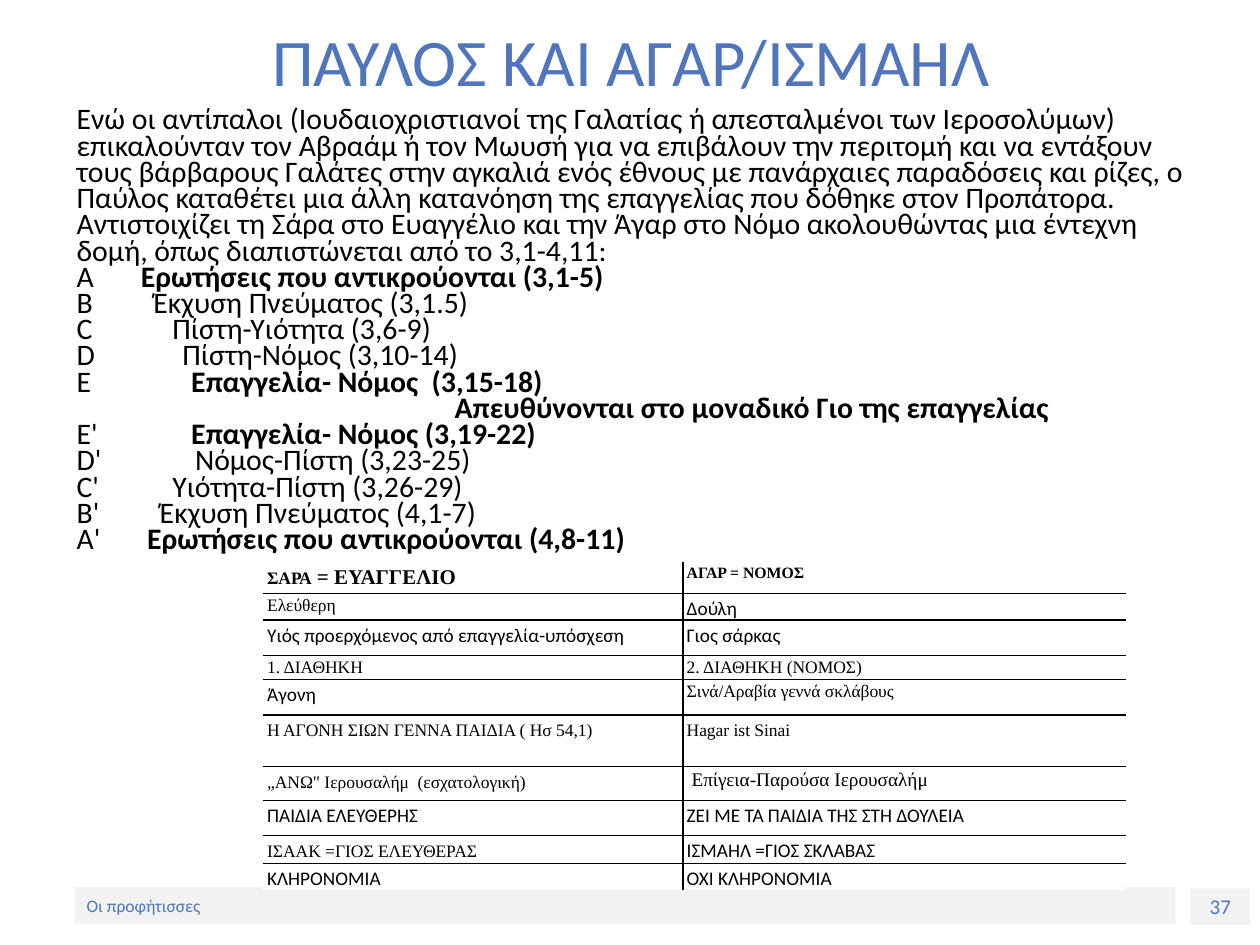
from dataclasses import dataclass

from lxml import etree
from pptx import Presentation, util as u
from pptx.dml.color import RGBColor
from pptx.enum import shapes, text
from pptx.oxml.ns import qn


@dataclass(frozen=True)
class Theme:
    sans: str = "Calibri"
    serif: str = "Times New Roman"
    blue: str = "5075BC"
    black: str = "000000"
    white: str = "FFFFFF"
    grey: str = "F2F2F2"
    title: float = 38
    body: float = 17
    lead: float = 15
    page: float = 12
    foot: float = 10
    cell: float = 11
    small: float = 10
    tiny: float = 9
    large: float = 12


T = Theme()
LEFT, MID = text.PP_ALIGN.LEFT, text.PP_ALIGN.CENTER


class Deck:
    def __init__(self, theme):
        self.theme = theme
        self.prs = Presentation()
        self.prs.slide_width, self.prs.slide_height = u.Inches(10), u.Inches(7.5)
        self.slide = self.prs.slides.add_slide(self.prs.slide_layouts[6])

    def style(self, para, size, color, face=None):
        font = para.font
        font.size, font.name = u.Pt(size), face or self.theme.sans
        font.color.rgb = RGBColor.from_string(color)

    def box(self, place):
        frame = self.slide.shapes.add_textbox(*map(u.Inches, place)).text_frame
        frame.word_wrap = True
        return frame

    def title(self, words, place):
        frame = self.box(place)
        frame.vertical_anchor = text.MSO_ANCHOR.MIDDLE
        para = frame.paragraphs[0]
        para.text, para.alignment = words, MID
        self.style(para, self.theme.title, self.theme.blue)

    def bar(self, words, place, size, align):
        shape = self.slide.shapes.add_shape(
            shapes.MSO_SHAPE.RECTANGLE, *map(u.Inches, place))
        shape.shadow.inherit = False
        shape.fill.solid()
        shape.fill.fore_color.rgb = RGBColor.from_string(self.theme.grey)
        shape.line.fill.background()
        frame = shape.text_frame
        frame.vertical_anchor = text.MSO_ANCHOR.MIDDLE
        para = frame.paragraphs[0]
        para.text, para.alignment = words, align
        self.style(para, size, self.theme.blue)

    def body(self, intro, steps, place):
        """Write the intro, then one tabbed line per (mark, stop, words, bold)."""
        frame = self.box(place)
        para = frame.paragraphs[0]
        para.text = intro
        self.line(para)
        for mark, stop, words, bold in steps:
            para = frame.add_paragraph()
            para.add_run().text = mark + "\t"
            run = para.add_run()
            run.text, run.font.bold = words, bold
            self.line(para, stop)

    def line(self, para, stop=None):
        para.line_spacing = u.Pt(self.theme.lead)
        if stop:
            tabs = etree.SubElement(para._p.get_or_add_pPr(), qn("a:tabLst"))
            etree.SubElement(tabs, qn("a:tab"), pos=str(u.Inches(stop)), algn="l")
        self.style(para, self.theme.body, self.theme.black)

    def edges(self, cell, drawn):
        """Draw the named sides in black and clear the others."""
        props = cell._tc.get_or_add_tcPr()
        for side in "LRTB":
            edge = etree.SubElement(props, qn("a:ln" + side), w=str(u.Pt(1)))
            if side in drawn:
                fill = etree.SubElement(edge, qn("a:solidFill"))
                etree.SubElement(fill, qn("a:srgbClr"), val=self.theme.black)
            else:
                etree.SubElement(edge, qn("a:noFill"))

    def table(self, rows, place, widths):
        grid = self.slide.shapes.add_table(
            len(rows), len(widths), *map(u.Inches, place)).table
        grid.first_row = grid.horz_banding = False
        for col, width in zip(grid.columns, widths):
            col.width = u.Inches(width)
        for r, (high, *cells) in enumerate(rows):
            grid.rows[r].height = u.Inches(high)
            for c, (words, face, size, *drop) in enumerate(cells):
                cell = grid.cell(r, c)
                sides = "L" if c else "R"
                sides += "T" if r else ""
                sides += "B" if r < len(rows) - 1 else ""
                self.edges(cell, sides)
                cell.fill.solid()
                cell.fill.fore_color.rgb = RGBColor.from_string(self.theme.white)
                cell.margin_left = cell.margin_right = u.Inches(0.03)
                cell.margin_top = u.Inches(drop[0] if drop else 0)
                cell.margin_bottom = 0
                para = cell.text_frame.paragraphs[0]
                para.text, para.line_spacing = words, 1.15
                self.style(para, size, self.theme.black, face)
                para.font.bold = r == 0
        return grid


INTRO = (
    "Ενώ οι αντίπαλοι (Ιουδαιοχριστιανοί της Γαλατίας ή απεσταλμένοι των "
    "Ιεροσολύμων) επικαλούνταν τον Αβραάμ ή τον Μωυσή για να επιβάλουν την "
    "περιτομή και να εντάξουν τους βάρβαρους Γαλάτες στην αγκαλιά ενός έθνους "
    "με πανάρχαιες παραδόσεις και ρίζες, ο Παύλος καταθέτει μια άλλη κατανόηση "
    "της επαγγελίας που δόθηκε στον Προπάτορα. Αντιστοιχίζει τη Σάρα στο "
    "Ευαγγέλιο και την Άγαρ στο Νόμο ακολουθώντας μια έντεχνη δομή, όπως "
    "διαπιστώνεται από το 3,1-4,11:")

STEPS = [
    ("A", 0.51, "Ερωτήσεις που αντικρούονται (3,1-5)", True),
    ("B", 0.61, "Έκχυση Πνεύματος (3,1.5)", False),
    ("C", 0.76, "Πίστη-Υιότητα (3,6-9)", False),
    ("D", 0.84, "Πίστη-Νόμος (3,10-14)", False),
    ("E", 0.91, "Επαγγελία- Νόμος  (3,15-18)", True),
    ("", 3, "Απευθύνονται στο μοναδικό Γιο της επαγγελίας", True),
    ("E'", 0.91, "Επαγγελία- Νόμος (3,19-22)", True),
    ("D'", 0.94, "Νόμος-Πίστη (3,23-25)", False),
    ("C'", 0.76, "Υιότητα-Πίστη (3,26-29)", False),
    ("B'", 0.66, "Έκχυση Πνεύματος (4,1-7)", False),
    ("A'", 0.56, "Ερωτήσεις που αντικρούονται (4,8-11)", True),
]

SANS, SERIF = (T.sans, T.cell), (T.serif, T.small)
LOW = (*SERIF, 0.03)
ROWS = [
    (0.25, ("ΣΑΡΑ = ΕΥΑΓΓΕΛΙΟ", T.serif, T.large), ("ΑΓΑΡ = ΝΟΜΟΣ", T.serif, T.tiny)),
    (0.18, ("Ελεύθερη", *SERIF), ("Δούλη", *SANS)),
    (0.28, ("Υιός προερχόμενος από επαγγελία-υπόσχεση", *SANS), ("Γιος σάρκας", *SANS)),
    (0.16, ("1. ΔΙΑΘΗΚΗ", *SERIF), ("2. ΔΙΑΘΗΚΗ (ΝΟΜΟΣ)", *SERIF)),
    (0.28, ("Άγονη", *SANS), ("Σινά/Αραβία γεννά σκλάβους", *SERIF)),
    (0.41, ("Η ΑΓΟΝΗ ΣΙΩΝ ΓΕΝΝΑ ΠΑΙΔΙΑ ( Ησ 54,1)", *LOW), ("Hagar ist Sinai", *LOW)),
    (0.27, ("„ΑΝΩ\" Ιερουσαλήμ  (εσχατολογική)", *LOW),
     (" Επίγεια-Παρούσα Ιερουσαλήμ", T.serif, T.cell)),
    (0.28, ("ΠΑΙΔΙΑ ΕΛΕΥΘΕΡΗΣ", *SANS), ("ΖΕΙ ΜΕ ΤΑ ΠΑΙΔΙΑ ΤΗΣ ΣΤΗ ΔΟΥΛΕΙΑ", *SANS)),
    (0.2, ("ΙΣΑΑΚ =ΓΙΟΣ ΕΛΕΥΘΕΡΑΣ", *LOW), ("ΙΣΜΑΗΛ =ΓΙΟΣ ΣΚΛΑΒΑΣ", *SANS)),
    (0.18, ("ΚΛΗΡΟΝΟΜΙΑ", *SANS), ("ΟΧΙ ΚΛΗΡΟΝΟΜΙΑ", *SANS)),
]


def main():
    deck = Deck(T)
    deck.bar("37", (9.45, 7.05, 0.47, 0.29), T.page, MID)
    deck.bar("Οι προφήτισσες", (0.59, 7.04, 8.74, 0.29), T.foot, LEFT)
    deck.title("ΠΑΥΛΟΣ ΚΑΙ ΑΓΑΡ/ΙΣΜΑΗΛ", (0.51, 0.13, 9, 0.69))
    deck.body(INTRO, STEPS, (0.51, 0.82, 9, 3.95))
    grid = deck.table(ROWS, (2.09, 4.46, 6.85, 2.6), (3.33, 3.52))
    head = grid.cell(0, 0).text_frame.paragraphs[0]
    name, rest = "ΣΑΡΑ", " = ΕΥΑΓΓΕΛΙΟ"
    head.runs[0].text, head.runs[0].font.size = name, u.Pt(T.small)
    head.add_run().text = rest
    deck.prs.save("out.pptx")


if __name__ == "__main__":
    main()
